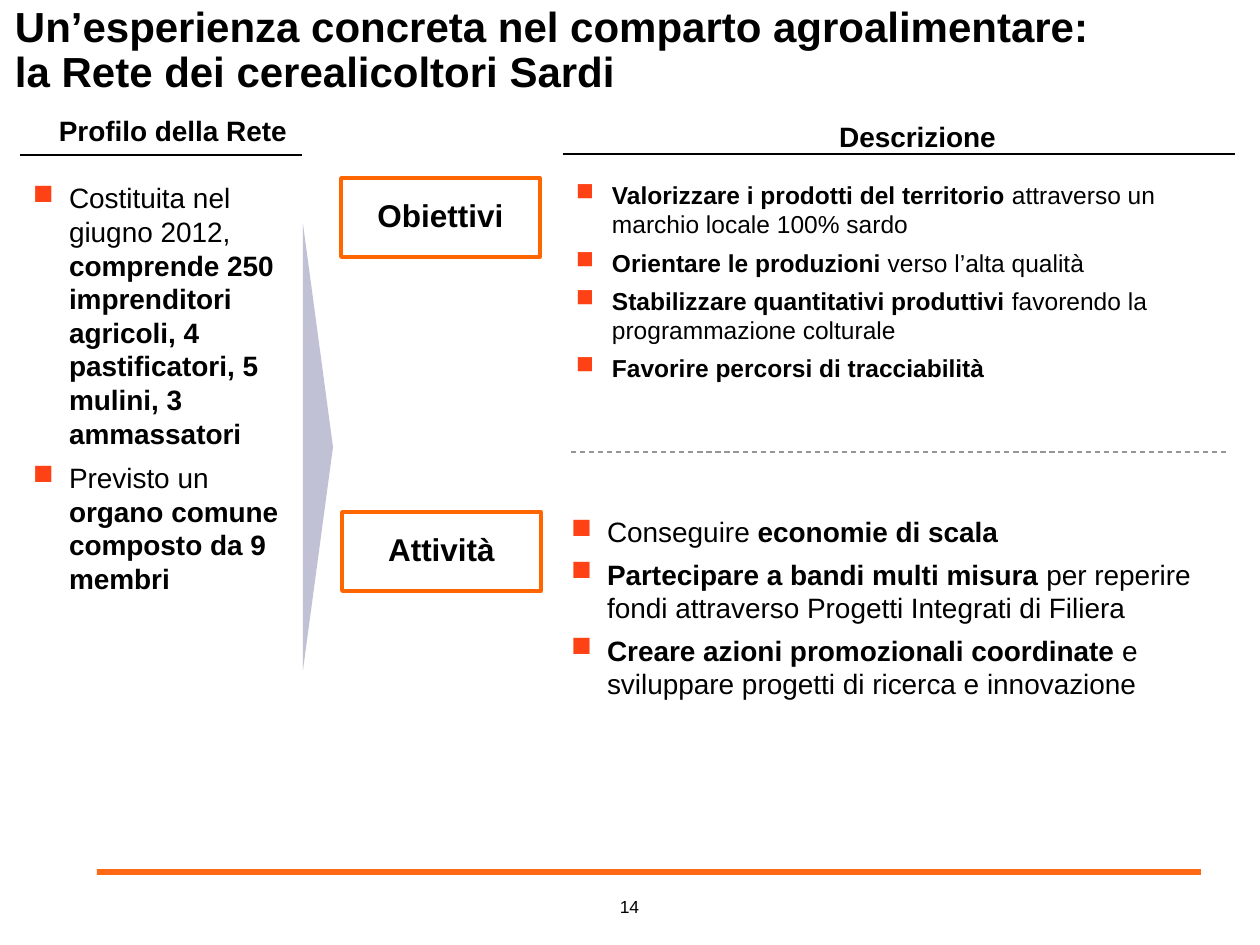
from dataclasses import dataclass

from lxml.etree import SubElement
from pptx import Presentation
from pptx.dml.color import RGBColor
from pptx.enum.dml import MSO_LINE_DASH_STYLE as Dash
from pptx.enum.shapes import MSO_CONNECTOR_TYPE as Connector
from pptx.enum.shapes import MSO_AUTO_SHAPE_TYPE as Shape
from pptx.enum.text import MSO_VERTICAL_ANCHOR as Anchor
from pptx.enum.text import PP_PARAGRAPH_ALIGNMENT as Align
from pptx.oxml.ns import qn
from pptx.util import Emu, Pt


@dataclass(frozen=True)
class Theme:
    font: str = "Arial"
    black: str = "000000"
    white: str = "FFFFFF"
    bar: str = "FD6917"
    border: str = "FF6600"
    bullet: str = "FF4215"
    arrow: str = "666699"
    divider: str = "969696"
    title_size: int = 24
    label_size: int = 18
    body_size: int = 16
    small_size: int = 14
    number_size: int = 10


THEME = Theme()
NO_INSETS = (0, 0)
INSETS = (13, 6)


def px(value):
    return Emu(round(value * 914400 / 126))


def apply(target, values):
    for name, value in values.items():
        setattr(target, name, value)


class SlideBuilder:
    def __init__(self, slide, theme):
        self.slide = slide
        self.theme = theme

    def fill_frame(self, frame, lines, size, paragraph_format):
        for index, line in enumerate(lines):
            paragraph = frame.paragraphs[0] if index == 0 else frame.add_paragraph()
            apply(paragraph, paragraph_format)
            if index == 0:
                paragraph.space_before = Pt(0)
            for position, part in enumerate(line.split("*")):
                if part:
                    run = paragraph.add_run()
                    run.text = part
                    apply(run.font, {"name": self.theme.font, "size": Pt(size),
                                     "bold": position % 2 == 1})
                    run.font.color.rgb = RGBColor.from_string(self.theme.black)

    def text(self, box, lines, size, insets=NO_INSETS, anchor=Anchor.TOP, **paragraph_format):
        frame = self.slide.shapes.add_textbox(*map(px, box)).text_frame
        side, edge = map(px, insets)
        apply(frame, {"word_wrap": True, "vertical_anchor": anchor,
                      "margin_left": side, "margin_right": side,
                      "margin_top": edge, "margin_bottom": edge})
        self.fill_frame(frame, lines, size, paragraph_format)
        return frame

    def heading(self, box, title):
        self.text(box, [f"*{title}*"], self.theme.body_size, INSETS, Anchor.MIDDLE,
                  alignment=Align.CENTER)

    def bullets(self, box, lines, size, gap, insets=NO_INSETS):
        frame = self.text(box, lines, size, insets, space_before=Pt(gap))
        for paragraph in frame.paragraphs:
            properties = paragraph._p.get_or_add_pPr()
            properties.set("marL", str(px(36)))
            properties.set("indent", str(px(-36)))
            color = SubElement(properties, qn("a:buClr"))
            SubElement(color, qn("a:srgbClr"), val=self.theme.bullet)
            SubElement(properties, qn("a:buChar"), char="■")

    def shape(self, kind, box, fill, border=None, alpha=None, rotation=0):
        shape = self.slide.shapes.add_shape(kind, *map(px, box))
        shape.shadow.inherit = False
        shape.rotation = rotation
        shape.fill.solid()
        shape.fill.fore_color.rgb = RGBColor.from_string(fill)
        if alpha is not None:
            color = shape.fill._xPr.find(qn("a:solidFill"))[0]
            SubElement(color, qn("a:alpha"), val=str(alpha * 1000))
        if border:
            shape.line.color.rgb = RGBColor.from_string(border)
            shape.line.width = Pt(2)
        else:
            shape.line.fill.background()
        return shape

    def label(self, left, top, title):
        shape = self.shape(Shape.RECTANGLE, (left, top, 199, 79),
                           self.theme.white, self.theme.border)
        apply(shape.text_frame, {"word_wrap": False, "vertical_anchor": Anchor.MIDDLE})
        self.fill_frame(shape.text_frame, [f"*{title}*"], self.theme.label_size,
                        {"alignment": Align.CENTER, "line_spacing": 0.9})

    def rule(self, left, right, top, color, dash=None):
        line = self.slide.shapes.add_connector(
            Connector.STRAIGHT, px(left), px(top), px(right), px(top))
        line.line.color.rgb = RGBColor.from_string(color)
        apply(line.line, {"width": Pt(0.75), "dash_style": dash})
        SubElement(line._element.spPr, qn("a:effectLst"))


def main():
    presentation = Presentation()
    apply(presentation, {"slide_width": px(1260), "slide_height": px(945)})
    slide = presentation.slides.add_slide(presentation.slide_layouts[6])
    builder = SlideBuilder(slide, THEME)

    builder.text((611, 896, 37, 21), ["14"], THEME.number_size, alignment=Align.CENTER)
    builder.shape(Shape.RECTANGLE, (97, 869, 1104, 6), THEME.bar)
    builder.text((15, 6, 1221, 92),
                 ["*Un’esperienza concreta nel comparto agroalimentare:*",
                  "*la Rete dei cerealicoltori Sardi*"],
                 THEME.title_size, line_spacing=0.9)

    builder.heading((34, 106, 278, 48), "Profilo della Rete")
    builder.rule(20, 302, 155, THEME.black)
    builder.bullets((20, 175, 284, 494), [
        "Costituita nel giugno 2012, *comprende 250 imprenditori agricoli, "
        "4 pastificatori, 5 mulini, 3 ammassatori*",
        "Previsto un *organo comune composto da 9 membri*",
    ], THEME.body_size, 6.4, INSETS)
    builder.shape(Shape.ISOSCELES_TRIANGLE, (95, 432, 446, 30), THEME.arrow,
                  alpha=40, rotation=90)

    builder.heading((719, 117, 397, 38), "Descrizione")
    builder.rule(563, 1235, 154, THEME.black)
    builder.label(341, 178, "Obiettivi")
    builder.bullets((563, 174, 630, 218), [
        "*Valorizzare i prodotti del territorio* attraverso un marchio locale 100% sardo",
        "*Orientare le produzioni* verso l’alta qualità",
        "*Stabilizzare quantitativi produttivi* favorendo la programmazione colturale",
        "*Favorire percorsi di tracciabilità*",
    ], THEME.small_size, 5, INSETS)
    builder.rule(571, 1226, 452, THEME.divider, Dash.DASH)
    builder.label(342, 512, "Attività")
    builder.bullets((571, 515, 624, 188), [
        "Conseguire *economie di scala*",
        "*Partecipare a bandi multi misura* per reperire fondi attraverso "
        "Progetti Integrati di Filiera",
        "*Creare azioni promozionali coordinate* e sviluppare progetti di ricerca "
        "e innovazione",
    ], THEME.body_size, 5)

    presentation.save("out.pptx")


if __name__ == "__main__":
    main()
